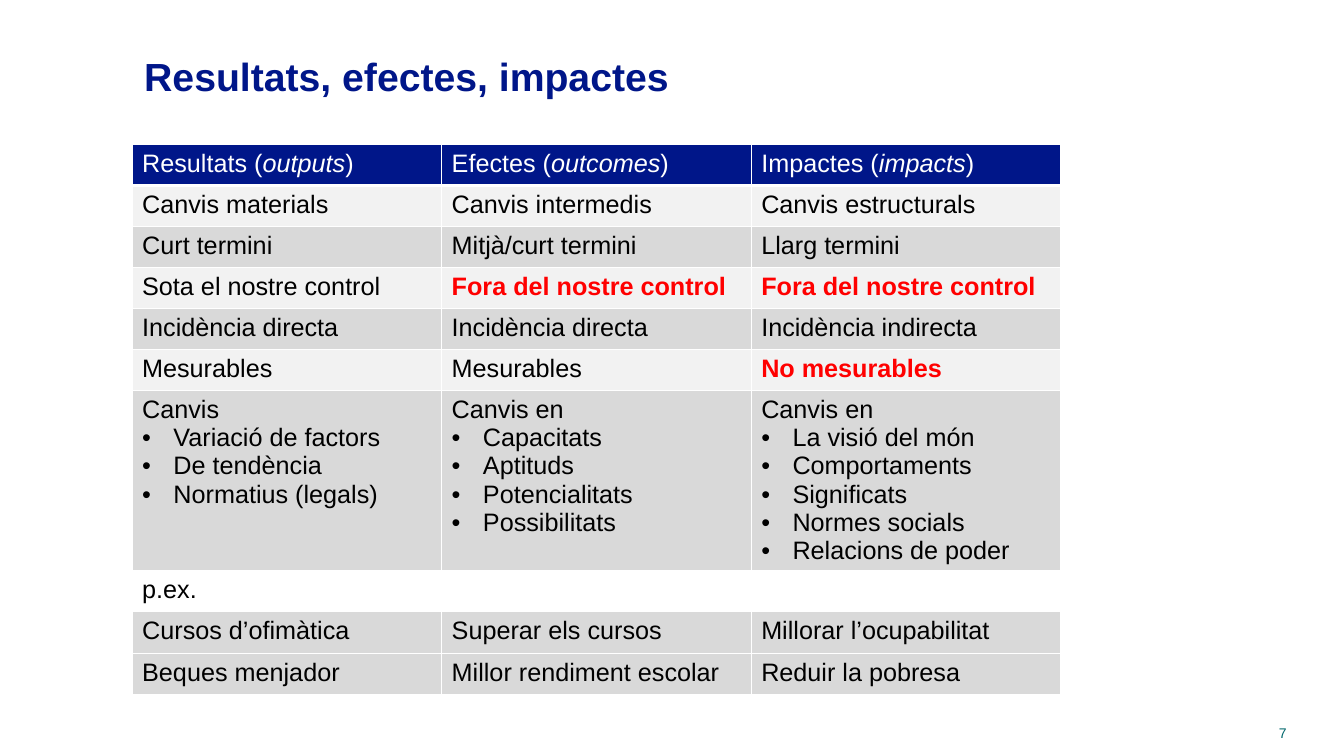
from dataclasses import dataclass
from lxml.etree import SubElement
from pptx import Presentation
from pptx.dml.color import RGBColor as RGB
from pptx.enum.text import MSO_ANCHOR as ANCHOR, MSO_AUTO_SIZE as AUTO, PP_ALIGN as ALIGN
from pptx.oxml.ns import qn
from pptx.util import Inches, Pt


@dataclass(frozen=True)
class Theme:
    """Colours, font and type sizes of the slide."""
    font: str = "Arial"
    navy: str = "001689"
    teal: str = "00676C"
    red: str = "FF0000"
    black: str = "000000"
    white: str = "FFFFFF"
    light: str = "F2F2F2"
    grey: str = "D9D9D9"
    title: int = 28
    body: int = 18
    small: int = 10


class Deck:
    """Places styled elements on one slide, with lengths in percent of its size."""

    def __init__(self, prs, theme):
        """Adds a title slide layout to the presentation."""
        self.prs, self.theme = prs, theme
        self.slide = prs.slides.add_slide(prs.slide_layouts[5])

    def box(self, x, y, w, h):
        """Turns percentages into a position and a size."""
        sw, sh = self.prs.slide_width, self.prs.slide_height
        return [int(v * side / 100) for v, side in zip((x, y, w, h), (sw, sh, sw, sh))]

    def add_text(self, p, text, size, color, bold=False):
        """Adds runs to a paragraph, with italics between bars."""
        for i, part in enumerate(text.split("|")):
            r = p.add_run()
            r.text = part
            fmt = dict(name=self.theme.font, size=Pt(size), bold=bold, italic=i % 2 == 1)
            for key, value in fmt.items():
                setattr(r.font, key, value)
            r.font.color.rgb = RGB.from_string(color)

    def title(self, text, area):
        """Moves and fills the title placeholder."""
        sp = self.slide.shapes.title
        for key, value in zip(("left", "top", "width", "height"), self.box(*area)):
            setattr(sp, key, value)
        tf = sp.text_frame
        fmt = dict(vertical_anchor=ANCHOR.MIDDLE, word_wrap=True, auto_size=AUTO.NONE)
        for key, value in fmt.items():
            setattr(tf, key, value)
        tf.paragraphs[0].alignment = ALIGN.LEFT
        self.add_text(tf.paragraphs[0], text, self.theme.title, self.theme.navy, True)

    def number(self, text, area):
        """Adds the page number."""
        tf = self.slide.shapes.add_textbox(*self.box(*area)).text_frame
        tf.word_wrap = True
        tf.paragraphs[0].alignment = ALIGN.RIGHT
        self.add_text(tf.paragraphs[0], text, self.theme.small, self.theme.teal)

    def bullet(self, p):
        """Gives a paragraph a hanging bullet."""
        pPr = p._p.get_or_add_pPr()
        pPr.set("marL", str(Inches(0.31)))
        pPr.set("indent", str(-Inches(0.31)))
        SubElement(pPr, qn("a:buFont"), typeface=self.theme.font)
        SubElement(pPr, qn("a:buChar"), char="•")

    def borders(self, cell, bottom):
        """Draws the four cell borders."""
        tcPr = cell._tc.get_or_add_tcPr()
        for side, width in dict(lnL=1, lnR=1, lnT=1, lnB=bottom).items():
            ln = SubElement(tcPr, qn(f"a:{side}"), w=str(Pt(width)))
            fill = SubElement(ln, qn("a:solidFill"))
            SubElement(fill, qn("a:srgbClr"), val=self.theme.white)

    def cell(self, cell, text, color, fill, bottom):
        """Fills one cell, with bullets after its first line and red for a leading mark."""
        self.borders(cell, bottom)
        if fill:
            cell.fill.solid()
            cell.fill.fore_color.rgb = RGB.from_string(fill)
        else:
            cell.fill.background()
        strong = text.startswith("!")
        color = self.theme.red if strong else color
        tf = cell.text_frame
        for i, line in enumerate(text.lstrip("!").split("\n")):
            p = tf.add_paragraph() if i else tf.paragraphs[0]
            if i:
                self.bullet(p)
            if line:
                self.add_text(p, line, self.theme.body, color, strong)

    def table(self, rows, fills, heights, area):
        """Adds the table with a header row and equal columns."""
        x, y, w, h = self.box(*area, sum(heights))
        t = self.slide.shapes.add_table(len(rows), len(rows[0]), x, y, w, h).table
        t.horz_banding = t.first_row = False
        for col in t.columns:
            col.width = w // len(rows[0])
        for i, (texts, fill, height) in enumerate(zip(rows, fills, heights)):
            t.rows[i].height = self.box(0, 0, 0, height)[3]
            color = self.theme.black if i else self.theme.white
            for j, text in enumerate(texts):
                self.cell(t.cell(i, j), text, color, fill, 1 if i else 3)


ROWS = [
    ("Resultats (|outputs|)", "Efectes (|outcomes|)", "Impactes (|impacts|)"),
    ("Canvis materials", "Canvis intermedis", "Canvis estructurals"),
    ("Curt termini", "Mitjà/curt termini", "Llarg termini"),
    ("Sota el nostre control", "!Fora del nostre control", "!Fora del nostre control"),
    ("Incidència directa", "Incidència directa", "Incidència indirecta"),
    ("Mesurables", "Mesurables", "!No mesurables"),
    ("Canvis\nVariació de factors\nDe tendència\nNormatius (legals)",
     "Canvis en\nCapacitats\nAptituds\nPotencialitats\nPossibilitats",
     "Canvis en\nLa visió del món\nComportaments\nSignificats\nNormes socials\nRelacions de poder"),
    ("p.ex.", "", ""),
    ("Cursos d’ofimàtica", "Superar els cursos", "Millorar l’ocupabilitat"),
    ("Beques menjador", "Millor rendiment escolar", "Reduir la pobresa"),
]


def main():
    """Builds and saves the slide."""
    prs = Presentation()
    prs.slide_width, prs.slide_height = Inches(13.33), Inches(7.5)
    th = Theme()
    deck = Deck(prs, th)
    deck.title("Resultats, efectes, impactes", (9.98, 5.87, 69, 8.4))
    fills = [th.navy] + [th.light, th.grey] * 3 + [None] + [th.grey] * 2
    heights = [5.43] * 6 + [23.75] + [5.43, 5.6, 5.43]
    deck.table(ROWS, fills, heights, (9.83, 19.1, 69.1))
    deck.number("7", (90.17, 95.2, 6.3, 3.87))
    prs.save("out.pptx")


if __name__ == "__main__":
    main()
